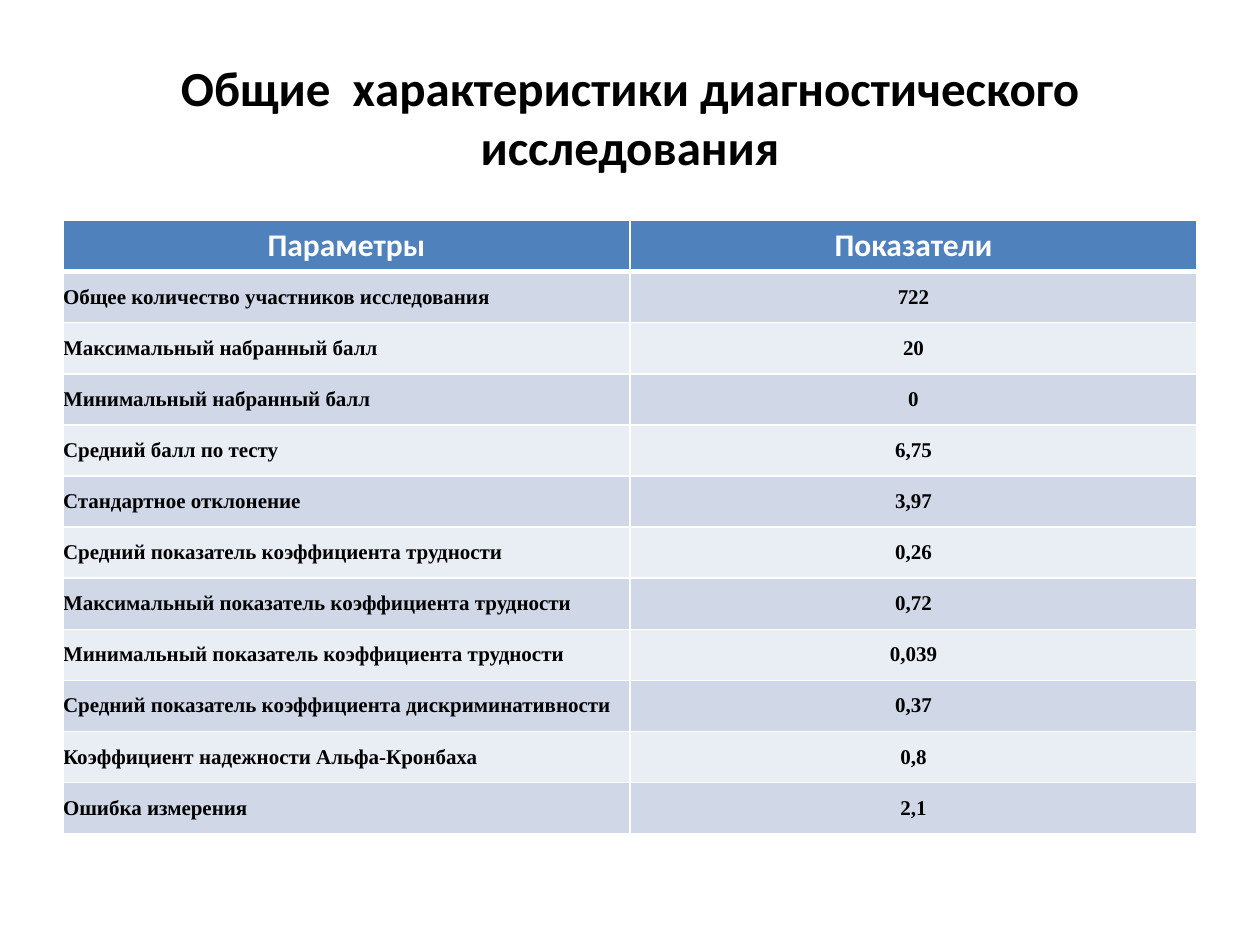
from lxml import etree
from pptx import Presentation
from pptx.dml.color import RGBColor
from pptx.enum.text import MSO_ANCHOR, PP_ALIGN
from pptx.oxml.ns import qn
from pptx.util import Inches, Pt

CENTER, JUSTIFY = PP_ALIGN.CENTER, PP_ALIGN.JUSTIFY
TOP, MIDDLE = MSO_ANCHOR.TOP, MSO_ANCHOR.MIDDLE

TITLE = "Общие  характеристики диагностического исследования"
HEADER = ("Параметры", "Показатели")
RESULTS = [
    ("Общее количество участников исследования", "722"),
    ("Максимальный набранный балл", "20"),
    ("Минимальный набранный балл", "0"),
    ("Средний балл по тесту", "6,75"),
    ("Стандартное отклонение", "3,97"),
    ("Средний показатель коэффициента трудности", "0,26"),
    ("Максимальный показатель коэффициента трудности", "0,72"),
    ("Минимальный показатель коэффициента трудности", "0,039"),
    ("Средний показатель коэффициента дискриминативности", "0,37"),
    ("Коэффициент надежности Альфа-Кронбаха", "0,8"),
    ("Ошибка измерения", "2,1"),
]


def color(value):
    return RGBColor.from_string(value)


class PageBuilder:
    heading_font = "Calibri"
    body_font = "Times New Roman"
    black, white = "000000", "FFFFFF"
    header_fill = "4F81BD"
    bands = ("D0D8E8", "E9EDF4")

    def __init__(self, page):
        self.page = page

    def set_text(self, frame, text, font, size, ink, align):
        para = frame.paragraphs[0]
        para.text = text
        para.alignment = align
        para.font.name = font
        para.font.size = Pt(size)
        para.font.bold = True
        para.font.color.rgb = color(ink)

    def title(self, text, left, top, width, height):
        box = self.page.shapes.add_textbox(
            Inches(left), Inches(top), Inches(width), Inches(height))
        frame = box.text_frame
        frame.word_wrap = True
        frame.vertical_anchor = MIDDLE
        self.set_text(frame, text, self.heading_font, 28, self.black, CENTER)

    def borders(self, cell, top, bottom):
        """Outline the cell in white; top and bottom widths are in points."""
        properties = cell._tc.get_or_add_tcPr()
        widths = {"a:lnL": 1, "a:lnR": 1, "a:lnT": top, "a:lnB": bottom}
        for index, (side, width) in enumerate(widths.items()):
            line = etree.Element(qn(side), w=str(Pt(width)))
            fill = etree.SubElement(line, qn("a:solidFill"))
            etree.SubElement(fill, qn("a:srgbClr"), val=self.white)
            properties.insert(index, line)

    def cell(self, cell, text, fill, font, size, ink, align, anchor,
             top=1, bottom=1):
        cell.fill.solid()
        cell.fill.fore_color.rgb = color(fill)
        cell.vertical_anchor = anchor
        self.set_text(cell.text_frame, text, font, size, ink, align)
        self.borders(cell, top, bottom)

    def table(self, header, results, left, top, width, height):
        table = self.page.shapes.add_table(
            len(results) + 1, len(header), Inches(left), Inches(top),
            Inches(width), Inches(height)).table
        for column, text in enumerate(header):
            self.cell(table.cell(0, column), text, self.header_fill,
                      self.heading_font, 18, self.white, CENTER, TOP, bottom=3)
        for row, values in enumerate(results, start=1):
            band = self.bands[(row - 1) % 2]
            for column, (text, align) in enumerate(zip(values, (JUSTIFY, CENTER))):
                cell = table.cell(row, column)
                cell.margin_left = cell.margin_right = 0
                cell.margin_top = cell.margin_bottom = 0
                self.cell(cell, text, band, self.body_font, 12, self.black,
                          align, MIDDLE, top=3 if row == 1 else 1)


def main():
    deck = Presentation()
    deck.slide_width, deck.slide_height = Inches(10), Inches(7.5)
    builder = PageBuilder(deck.slides.add_slide(deck.slide_layouts[6]))
    builder.title(TITLE, 0.5, 0.3, 9, 1.25)
    builder.table(HEADER, RESULTS, 0.5, 1.75, 9, 4.87)
    deck.save("out.pptx")


if __name__ == "__main__":
    main()
